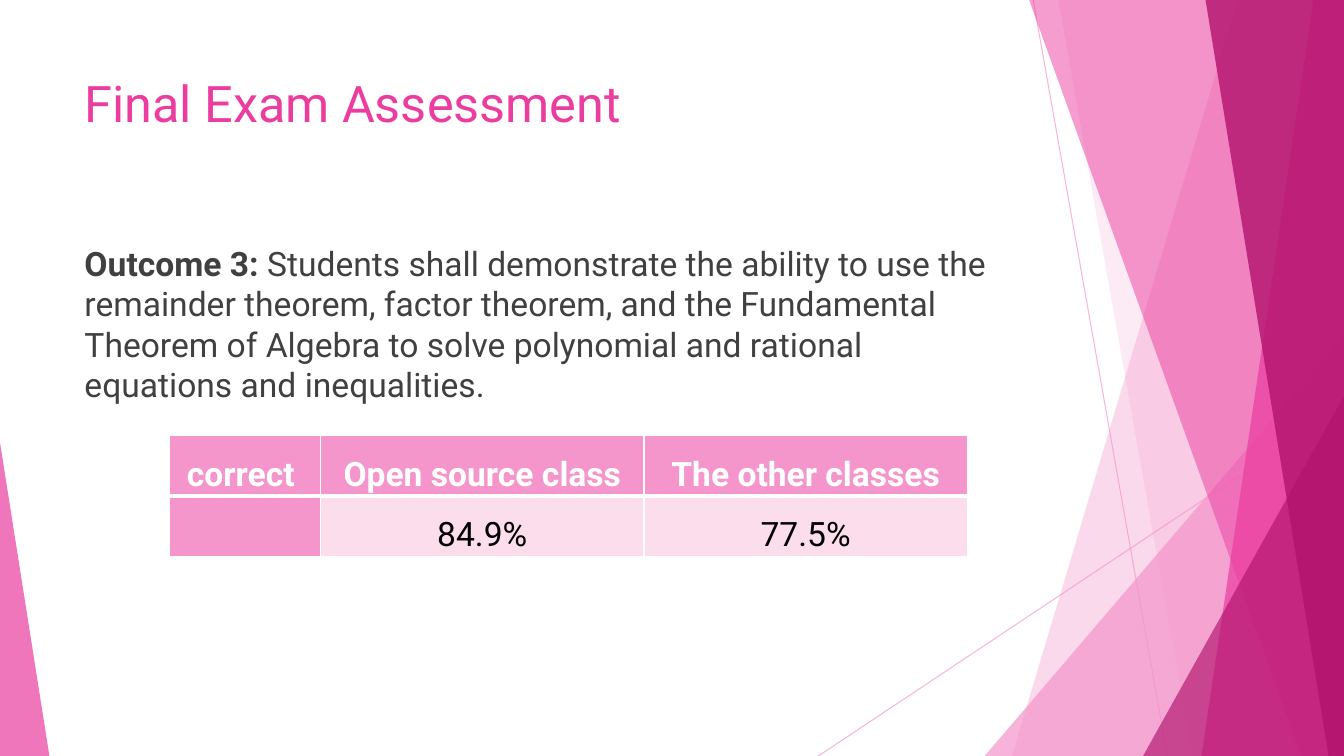
"""Build the final exam assessment slide with its faceted border and results table."""
from lxml import etree
from pptx import Presentation
from pptx.dml.color import RGBColor
from pptx.enum import shapes, text
from pptx.oxml import ns
from pptx.util import Pt

WIDTH, HEIGHT = 960, 540
FONT = "Roboto"
COLORS = {
    "light": "F496CB",
    "pink": "EB3D9F",
    "dark": "B2136D",
    "pale": "FBDDEC",
    "body": "404040",
    "white": "FFFFFF",
    "black": "000000",
}
RAYS = [(738, 0, 833.8, HEIGHT), (WIDTH, 290.2, 584.6, HEIGHT)]
FACETS = [
    (884.2, 722.9, "light", 36),
    (756, 851.8, "light", 20),
    (735.1, 929.5, "pink", 50),
    (938.2, 858.2, "pink", 70),
    (861.1, 949, "dark", 80),
]
CORNERS = [
    (703.4, 256.6, 300.2, 1, "light", 72),
    (816.5, 143.5, 257, 1, "dark", 66),
    (0, 35.3, 223.9, 0, "pink", 70),
]
COLUMN_WIDTHS = [108, 231, 231]
ROW_HEIGHT = 42
RESULTS = [
    ["correct ", "Open source class", "The other classes"],
    ["", "84.9%", "77.5%"],
]


def paint(fill, color, opacity=100):
    """Give a fill a solid colour with an opacity in percent."""
    fill.solid()
    fill.fore_color.rgb = RGBColor.from_string(COLORS[color])
    if opacity < 100:
        for element in fill._xPr.iter(ns.qn("a:srgbClr")):
            etree.SubElement(element, ns.qn("a:alpha"), val=str(opacity * 1000))


def add_ray(slide, start_x, start_y, end_x, end_y):
    """Draw a thin translucent line."""
    ray = slide.shapes.add_connector(
        shapes.MSO_CONNECTOR.STRAIGHT, Pt(start_x), Pt(start_y), Pt(end_x), Pt(end_y))
    ray.line.width = Pt(0.75)
    paint(ray.line.fill, "light", 70)
    etree.SubElement(ray._element.spPr, ns.qn("a:effectLst"))


def finish_shape(shape, color, opacity):
    """Make a shape flat, translucent and without outline."""
    shape.shadow.inherit = False
    shape.line.fill.background()
    paint(shape.fill, color, opacity)


def add_facet(slide, top_x, bottom_x, color, opacity):
    """Draw a full-height band from a slanted left edge to the right of the slide."""
    builder = slide.shapes.build_freeform(Pt(top_x), 0, scale=1.0)
    builder.add_line_segments(
        [(Pt(WIDTH), 0), (Pt(WIDTH), Pt(HEIGHT)), (Pt(bottom_x), Pt(HEIGHT))])
    finish_shape(builder.convert_to_shape(), color, opacity)


def add_corner(slide, left, width, height, apex, color, opacity):
    """Draw a right triangle standing on the bottom edge."""
    triangle = slide.shapes.add_shape(
        shapes.MSO_SHAPE.ISOSCELES_TRIANGLE,
        Pt(left), Pt(HEIGHT - height), Pt(width), Pt(height))
    triangle.adjustments[0] = apex
    finish_shape(triangle, color, opacity)


def add_run(paragraph, words, size=24, color="body", bold=False):
    """Append formatted text to a paragraph."""
    run = paragraph.add_run()
    run.text = words
    run.font.name = FONT
    run.font.size = Pt(size)
    run.font.bold = bold
    run.font.color.rgb = RGBColor.from_string(COLORS[color])


def add_text_box(slide, left, top, width, height):
    """Add a wrapping text box and return its first paragraph."""
    box = slide.shapes.add_textbox(Pt(left), Pt(top), Pt(width), Pt(height))
    box.text_frame.word_wrap = True
    return box.text_frame.paragraphs[0]


def add_border(cell, side, width):
    """Give one side of a cell a white border."""
    border = etree.SubElement(
        cell._tc.get_or_add_tcPr(), ns.qn(f"a:ln{side}"), w=str(Pt(width)))
    fill = etree.SubElement(border, ns.qn("a:solidFill"))
    etree.SubElement(fill, ns.qn("a:srgbClr"), val=COLORS["white"])


def format_cell(cell, words, is_header, is_label):
    """Fill in one table cell."""
    cell.margin_left = cell.margin_right = Pt(5)
    cell.margin_top = cell.margin_bottom = 0
    for side in "LRTB":
        is_divider = side == ("B" if is_header else "T")
        add_border(cell, side, 3 if is_divider else 1)
    paint(cell.fill, "light" if is_header or is_label else "pale")
    if words:
        paragraph = cell.text_frame.paragraphs[0]
        paragraph.alignment = text.PP_ALIGN.CENTER
        paragraph.line_spacing = 1.5
        add_run(paragraph, words, color="white" if is_header else "black", bold=is_header)


def add_results(slide, left, top):
    """Add the table of correct answers."""
    table = slide.shapes.add_table(
        len(RESULTS), len(COLUMN_WIDTHS), Pt(left), Pt(top),
        Pt(sum(COLUMN_WIDTHS)), Pt(ROW_HEIGHT * len(RESULTS))).table
    for column, width in zip(table.columns, COLUMN_WIDTHS):
        column.width = Pt(width)
    for row_index, values in enumerate(RESULTS):
        for column_index, words in enumerate(values):
            format_cell(table.cell(row_index, column_index), words,
                        row_index == 0, column_index == 0)


def main():
    """Build and save the presentation."""
    presentation = Presentation()
    presentation.slide_width, presentation.slide_height = Pt(WIDTH), Pt(HEIGHT)
    slide = presentation.slides.add_slide(presentation.slide_layouts[6])
    for ray in RAYS:
        add_ray(slide, *ray)
    for facet in FACETS[:2]:
        add_facet(slide, *facet)
    add_corner(slide, *CORNERS[0])
    for facet in FACETS[2:]:
        add_facet(slide, *facet)
    for corner in CORNERS[1:]:
        add_corner(slide, *corner)

    title = add_text_box(slide, 53.3, 48.2, 676.8, 103.7)
    add_run(title, "Final Exam Assessment", size=36, color="pink")
    outcome = add_text_box(slide, 53.3, 169.9, 676.8, 305.3)
    add_run(outcome, "Outcome 3: ", bold=True)
    add_run(outcome, "Students shall demonstrate the ability to use the remainder theorem, "
                     "factor theorem, and the Fundamental Theorem of Algebra to solve "
                     "polynomial and rational equations and inequalities.")
    add_results(slide, 121, 311)
    presentation.save("out.pptx")


if __name__ == "__main__":
    main()
